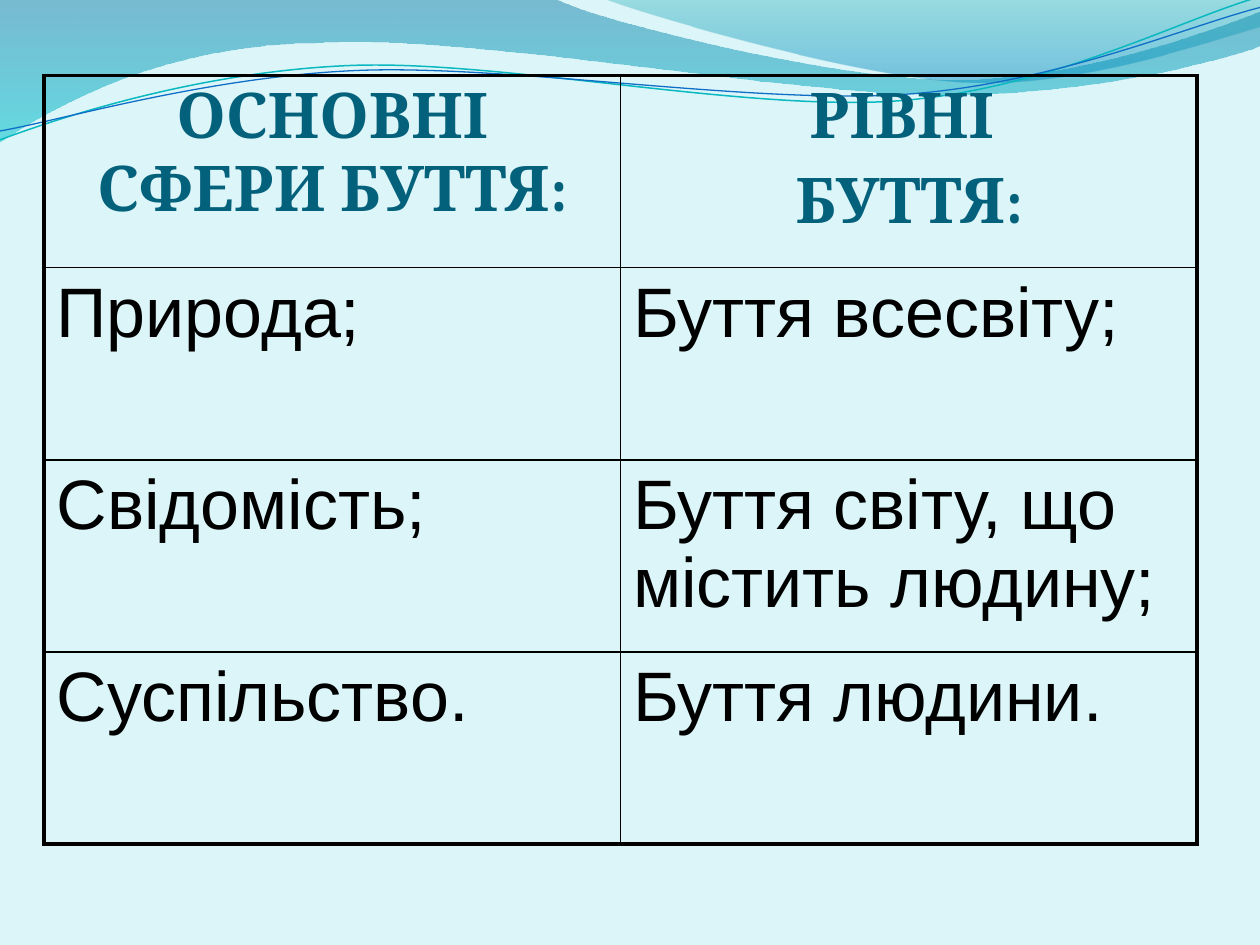
import math
from dataclasses import dataclass

from lxml import etree
from pptx import Presentation
from pptx import util as u
from pptx.dml.color import RGBColor
from pptx.enum import text
from pptx.oxml import ns

PALE_AQUA = RGBColor(0xDB, 0xF5, 0xF9)
HEADING_TEAL = RGBColor(0x04, 0x61, 0x7B)
BLACK = RGBColor(0, 0, 0)
DEEP_BLUE = RGBColor(0x00, 0x74, 0xA1)
BRIGHT_CYAN = RGBColor(0x00, 0xC6, 0xCF)
SEA_GREEN = RGBColor(0x00, 0xA1, 0xA9)
SKY_BLUE = RGBColor(0x00, 0x8B, 0xBF)
LINE_CYAN = RGBColor(0x0A, 0xB8, 0xBF)
LINE_BLUE = RGBColor(0x0F, 0x6F, 0xC6)

THIN, THICK = u.Pt(1), u.Pt(2.25)
LINE_TILT = 2.7  # degrees, counterclockwise

Point = tuple[float, float]
Segment = tuple[Point, ...]


@dataclass
class Stop:
    position: float
    color: RGBColor
    opacity: int


@dataclass
class Ribbon:
    """A filled wave; a one-point segment is a line, a three-point one a curve."""
    segments: list[Segment]
    stops: list[Stop]


@dataclass
class WaveLine:
    segments: list[Segment]
    center: Point
    color: RGBColor
    width: float


@dataclass
class CellStyle:
    font: str
    size: int
    color: RGBColor
    bold: bool
    alignment: text.PP_ALIGN


HEADING = CellStyle("Cambria", 36, HEADING_TEAL, True, text.PP_ALIGN.CENTER)
BODY = CellStyle("Arial", 40, BLACK, False, text.PP_ALIGN.LEFT)

RIBBONS = [
    Ribbon([((0, -0.01),), ((4.4, -0.01),),
            ((4.76, 0.17), (6.64, 0.63), (7.58, 0.63)),
            ((8.53, 0.63), (9.58, 0.26), (10, 0.09)), ((10.01, 0.36),),
            ((9.83, 0.44), (8.7, 0.76), (7.46, 0.75)),
            ((6.22, 0.75), (3.82, 0.28), (2.57, 0.34)),
            ((1.29, 0.35), (0.46, 0.83), (-0.01, 1.13)), ((0, -0.01),)],
           [Stop(0, DEEP_BLUE, 45), Stop(1, BRIGHT_CYAN, 55)]),
    Ribbon([((4.79, -0.01),),
            ((5.09, 0.11), (6.82, 0.62), (7.69, 0.65)),
            ((8.56, 0.69), (9.61, 0.32), (10, 0.21)), ((10, 0),), ((4.79, -0.01),)],
           [Stop(0, SEA_GREEN, 30), Stop(0.8, SKY_BLUE, 45)]),
]
WAVE_LINES = [
    WaveLine([((0, 1.11),), ((0.48, 0.93), (1.58, 0.57), (2.77, 0.52)),
              ((3.95, 0.47), (5.93, 0.89), (7.13, 0.8)),
              ((8.33, 0.71), (9.38, 0.15), (9.98, -0.02))], (4.99, 0.58), LINE_CYAN, 0.85),
    WaveLine([((0, 1.04),), ((0.47, 0.96), (1.64, 0.61), (2.83, 0.56)),
              ((4.03, 0.51), (5.97, 0.83), (7.17, 0.75)),
              ((8.36, 0.67), (9.41, 0.21), (10, 0.06))], (5, 0.59), LINE_BLUE, 0.75),
]
# Each cell is a list of paragraphs.
ROWS = [
    (["ОСНОВНІ СФЕРИ БУТТЯ:"], ["РІВНІ ", "БУТТЯ:"]),
    (["Природа;"], ["Буття всесвіту;"]),
    (["Свідомість;"], ["Буття світу, що містить людину;"]),
    (["Суспільство."], ["Буття людини."]),
]


def turn(point: Point, center: Point, degrees: float) -> Point:
    """Rotate a point clockwise about a center."""
    dx, dy = point[0] - center[0], point[1] - center[1]
    cosine, sine = math.cos(math.radians(degrees)), math.sin(math.radians(degrees))
    return center[0] + dx * cosine - dy * sine, center[1] + dx * sine + dy * cosine


def add_outline(slide, segments: list[Segment], close: bool):
    """Lay the outline through every point, then join each three-point segment as a curve."""
    start, *others = [(u.Inches(x), u.Inches(y)) for segment in segments for x, y in segment]
    builder = slide.shapes.build_freeform(*start)
    builder.add_line_segments(others, close=close)
    shape = builder.convert_to_shape()
    shape.shadow.inherit = False
    lines = iter(shape.element.spPr.findall(".//" + ns.qn("a:lnTo")))
    for segment in segments[1:]:
        first, *rest = [next(lines) for _ in segment]
        if rest:
            first.tag = ns.qn("a:cubicBezTo")
        for line in rest:
            first.append(line[0])
            line.getparent().remove(line)
    return shape


def add_ribbon(slide, ribbon: Ribbon) -> None:
    shape = add_outline(slide, ribbon.segments, True)
    shape.line.fill.background()
    shape.fill.gradient()
    shape.fill.gradient_angle = 270
    for target, stop in zip(shape.fill.gradient_stops, ribbon.stops):
        target.position = stop.position
        target.color.rgb = stop.color
    colors = shape.element.spPr.findall(".//" + ns.qn("a:srgbClr"))
    for color, stop in zip(colors, ribbon.stops):
        etree.SubElement(color, ns.qn("a:alpha"), val=str(stop.opacity * 1000))


def add_wave_line(slide, wave: WaveLine) -> None:
    segments = [tuple(turn(point, wave.center, LINE_TILT) for point in segment)
                for segment in wave.segments]
    shape = add_outline(slide, segments, False)
    shape.rotation = 360 - LINE_TILT
    shape.fill.background()
    shape.line.color.rgb = wave.color
    shape.line.width = u.Pt(wave.width)


def set_borders(cell, widths: dict[str, int]) -> None:
    properties = cell._tc.get_or_add_tcPr()
    for side, width in widths.items():
        line = etree.SubElement(properties, ns.qn(f"a:ln{side}"), w=str(int(width)))
        fill = etree.SubElement(line, ns.qn("a:solidFill"))
        etree.SubElement(fill, ns.qn("a:srgbClr"), val=str(BLACK))


def write_cell(cell, lines: list[str], style: CellStyle) -> None:
    frame = cell.text_frame
    for index, line in enumerate(lines):
        paragraph = frame.add_paragraph() if index else frame.paragraphs[0]
        paragraph.alignment = style.alignment
        spacing = etree.SubElement(paragraph._p.get_or_add_pPr(), ns.qn("a:spcBef"))
        etree.SubElement(spacing, ns.qn("a:spcPct"), val="20000")
        run = paragraph.add_run()
        run.text = line
        run.font.name = style.font
        run.font.size = u.Pt(style.size)
        run.font.bold = style.bold
        run.font.color.rgb = style.color


def add_being_table(slide) -> None:
    last_row, last_column = len(ROWS) - 1, len(ROWS[0]) - 1
    table = slide.shapes.add_table(len(ROWS), len(ROWS[0]), u.Inches(0.35), u.Inches(0.6),
                                   u.Inches(9.15), u.Inches(6.1)).table
    table.first_row = table.horz_banding = False
    for row, contents in enumerate(ROWS):
        for column, lines in enumerate(contents):
            cell = table.cell(row, column)
            outer = {"L": column == 0, "R": column == last_column,
                     "T": row == 0, "B": row == last_row}
            set_borders(cell, {side: THICK if edge else THIN for side, edge in outer.items()})
            cell.fill.background()
            write_cell(cell, lines, BODY if row else HEADING)


def main() -> None:
    presentation = Presentation()
    presentation.slide_width, presentation.slide_height = u.Inches(10), u.Inches(7.5)
    slide = presentation.slides.add_slide(presentation.slide_layouts[6])
    slide.background.fill.solid()
    slide.background.fill.fore_color.rgb = PALE_AQUA
    for ribbon in RIBBONS:
        add_ribbon(slide, ribbon)
    for wave in WAVE_LINES:
        add_wave_line(slide, wave)
    add_being_table(slide)
    presentation.save("out.pptx")


if __name__ == "__main__":
    main()
